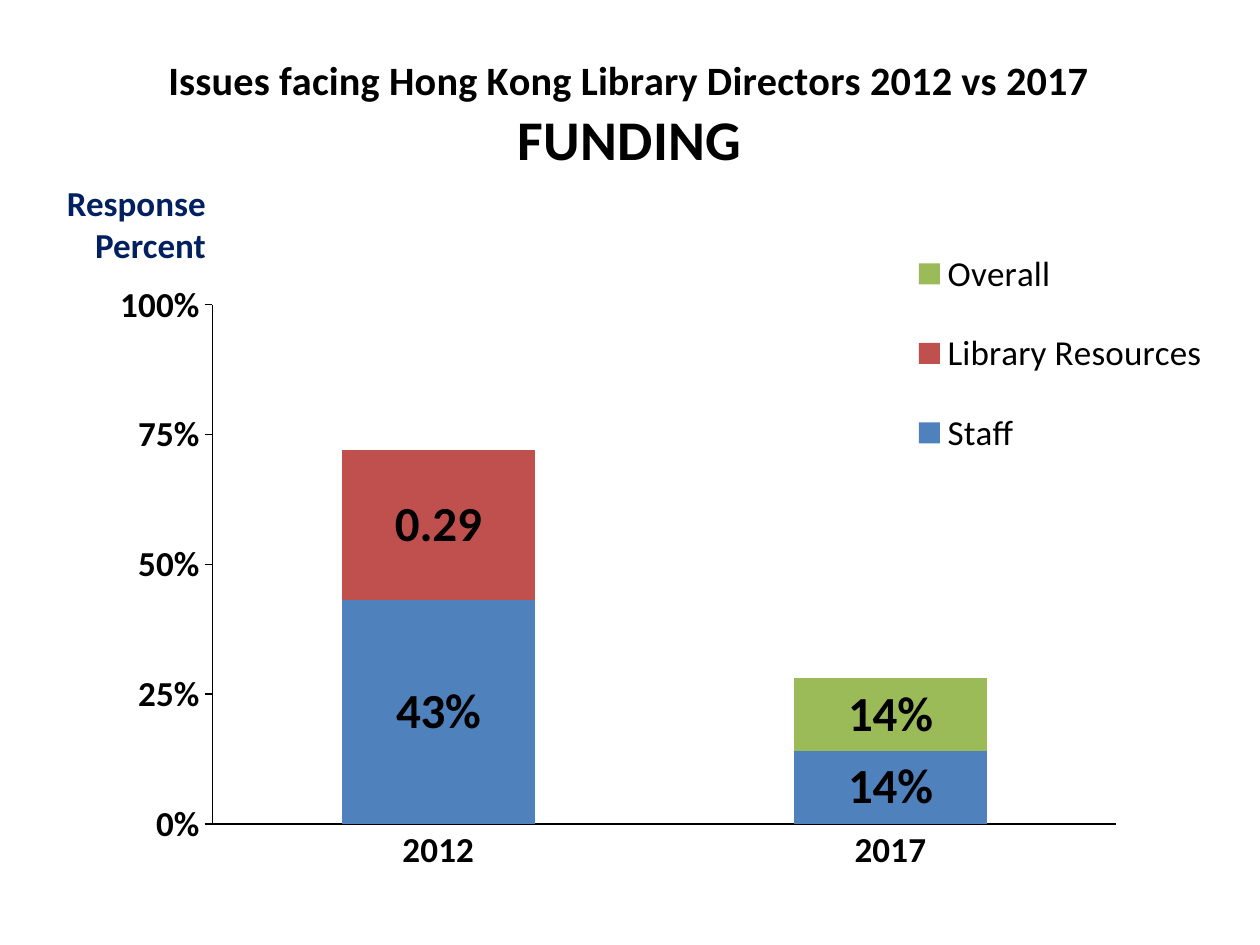
import pptx
import pptx.chart.data
import pptx.dml.color
import pptx.enum.chart
import pptx.enum.text
import pptx.oxml
import pptx.oxml.ns
import pptx.util
from pptx.util import Cm

CHART_WIDTH, CHART_HEIGHT = Cm(24.84), Cm(17.81)


def style(font, size, color="000000", bold=True):
    font.name = "Calibri"
    font.size = pptx.util.Pt(size)
    font.bold = bold
    font.color.rgb = pptx.dml.color.RGBColor.from_string(color)


def place(element, index, **lengths):
    """Give a chart part a manual layout, from centimetres within the chart."""
    for old in element.findall(pptx.oxml.ns.qn("c:layout")):
        element.remove(old)
    target = '<c:layoutTarget val="inner"/>' if index == 0 else ""
    modes = "".join(f'<c:{key}Mode val="edge"/>' for key in "xy")
    values = "".join(
        f'<c:{key} val="{Cm(length) / (CHART_WIDTH if key in "xw" else CHART_HEIGHT):.4f}"/>'
        for key, length in lengths.items())
    element.insert(index, pptx.oxml.parse_xml(
        f'<c:layout {pptx.oxml.ns.nsdecls("c")}><c:manualLayout>'
        f"{target}{modes}{values}</c:manualLayout></c:layout>"))


deck = pptx.Presentation()
deck.slide_width, deck.slide_height = Cm(25.4), Cm(19.05)
slide = deck.slides.add_slide(deck.slide_layouts[6])

# Funding chart
issues = [
    ("Staff", (0.43, 0.14), "4F81BD", "0%"),
    ("Library Resources", (0.29, None), "C0504D", "General"),
    ("Overall", (None, 0.14), "9BBB59", "0%"),
]
responses = pptx.chart.data.CategoryChartData()
responses.categories = ["2012", "2017"]
for name, shares, color, number_format in issues:
    responses.add_series(name, shares, number_format)

funding = slide.shapes.add_chart(
    pptx.enum.chart.XL_CHART_TYPE.COLUMN_STACKED,
    Cm(0.28), Cm(0.53), CHART_WIDTH, CHART_HEIGHT, responses).chart
style(funding.font, 10, bold=False)

bars = funding.plots[0]
bars.gap_width = 134
bars.overlap = 100
bars.vary_by_categories = False
for series, (name, shares, color, number_format) in zip(bars.series, issues):
    series.format.fill.solid()
    series.format.fill.fore_color.rgb = pptx.dml.color.RGBColor.from_string(color)
    labels = series.data_labels
    labels.show_value = True
    labels.number_format = number_format
    labels.number_format_is_linked = False
    labels.position = pptx.enum.chart.XL_LABEL_POSITION.CENTER
    style(labels.font, 28)

# Heading
heading = funding.chart_title.text_frame
heading.text = "Issues facing Hong Kong Library Directors 2012 vs 2017\nFUNDING"
for line, size in zip(heading.paragraphs, (23, 32)):
    line.alignment = pptx.enum.text.PP_ALIGN.CENTER
    style(line.runs[0].font, size)
funding.chart_title.include_in_layout = False

# Axes
years, percent = funding.category_axis, funding.value_axis
for axis in (years, percent):
    axis.has_major_gridlines = False
    axis.format.line.width = pptx.util.Pt(0.75)
    axis.format.line.color.rgb = pptx.dml.color.RGBColor.from_string("000000")
    style(axis.tick_labels.font, 20)
years.major_tick_mark = pptx.enum.chart.XL_TICK_MARK.NONE
percent.major_tick_mark = pptx.enum.chart.XL_TICK_MARK.OUTSIDE
percent.minimum_scale, percent.maximum_scale = 0, 1
percent.major_unit = 0.25
percent.tick_labels.number_format = "0%"
percent.tick_labels.number_format_is_linked = False

# Legend
funding.has_legend = True
funding.legend.position = pptx.enum.chart.XL_LEGEND_POSITION.RIGHT
funding.legend.include_in_layout = False
style(funding.legend.font, 20, bold=False)

# Layout of the chart's parts
plot_area = bars._element.getparent()
place(plot_area, 0, x=4, y=5.61, w=18.23, h=10.47)
place(funding.chart_title._element, 1, x=3.04, y=0.48)
place(funding.legend._element, 1, x=17.87, y=3.83, w=6.46, h=5.53)

# Caption above the percent axis
caption = slide.shapes.add_textbox(Cm(0.89), Cm(3.53), Cm(3.51), Cm(1.5)).text_frame
caption.word_wrap = True
caption.text = "Response Percent"
caption.paragraphs[0].alignment = pptx.enum.text.PP_ALIGN.RIGHT
style(caption.paragraphs[0].runs[0].font, 20, "002060")

deck.save("out.pptx")
